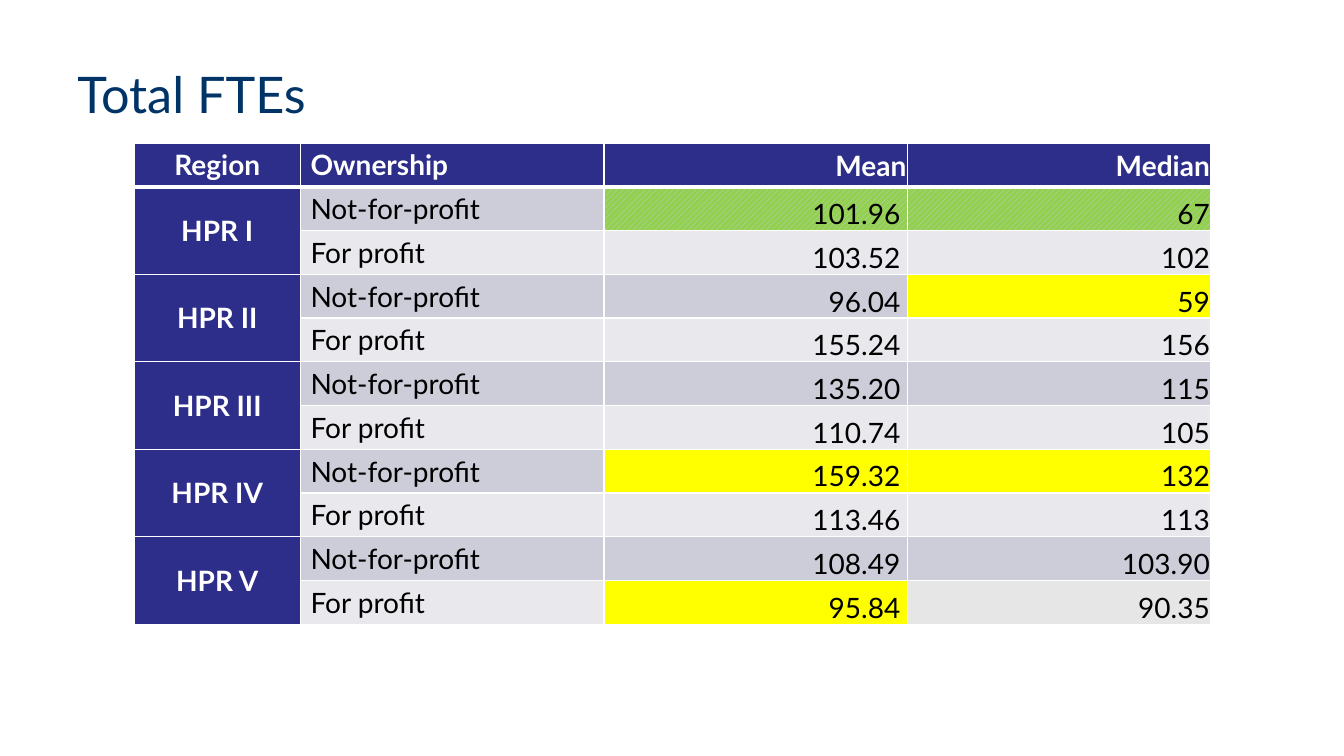
from lxml import etree
from pptx import Presentation
from pptx.dml.color import RGBColor
from pptx.enum import dml, text
from pptx.oxml.ns import qn
from pptx.util import Inches, Pt

NAVY, WHITE, BLACK, YELLOW = "2D2D8A", "FFFFFF", "000000", "FFFF00"
BAND_DARK, BAND_LIGHT, GREY, GREEN = "CDCDDA", "E8E8ED", "E6E6E6", "92D050"
HATCHED = "hatched"
LEFT, CENTER, RIGHT = text.PP_ALIGN.LEFT, text.PP_ALIGN.CENTER, text.PP_ALIGN.RIGHT
TOP, MIDDLE, BOTTOM = (text.MSO_ANCHOR.TOP, text.MSO_ANCHOR.MIDDLE,
                       text.MSO_ANCHOR.BOTTOM)

HEADERS = ["Region", "Ownership", "Mean", "Median"]
COLUMN_WIDTHS = [1.65, 3.01, 3.01, 3.01]
OWNERSHIPS = ["Not-for-profit", "For profit"]
# Region, then (mean, median) for each ownership
REGIONS = [
    ("HPR I", [("101.96", "67"), ("103.52", "102")]),
    ("HPR II", [("96.04", "59"), ("155.24", "156")]),
    ("HPR III", [("135.20", "115"), ("110.74", "105")]),
    ("HPR IV", [("159.32", "132"), ("113.46", "113")]),
    ("HPR V", [("108.49", "103.90"), ("95.84", "90.35")]),
]
# Fills that differ from the row band, by (row, column)
HIGHLIGHTS = {
    (1, 2): HATCHED, (1, 3): HATCHED, (3, 3): YELLOW,
    (7, 2): YELLOW, (7, 3): YELLOW, (10, 2): YELLOW, (10, 3): GREY,
}


def rgb(color):
    return RGBColor.from_string(color)


def write(frame, content, size=20, color=BLACK, bold=False, align=LEFT):
    paragraph = frame.paragraphs[0]
    paragraph.alignment = align
    run = paragraph.add_run()
    run.text = content
    run.font.name = "Lato"
    run.font.size = Pt(size)
    run.font.bold = bold
    run.font.color.rgb = rgb(color)


def paint(cell, fill):
    if fill == HATCHED:
        cell.fill.patterned()
        cell.fill.pattern = dml.MSO_PATTERN.WIDE_UPWARD_DIAGONAL
        cell.fill.fore_color.rgb = rgb(BAND_DARK)
        cell.fill.back_color.rgb = rgb(GREEN)
    else:
        cell.fill.solid()
        cell.fill.fore_color.rgb = rgb(fill)


def set_borders(cell, top=1, bottom=1):
    properties = cell._tc.get_or_add_tcPr()
    sides = [("a:lnL", 1), ("a:lnR", 1), ("a:lnT", top), ("a:lnB", bottom)]
    for position, (tag, width) in enumerate(sides):
        line = etree.Element(qn(tag), w=str(Pt(width)))
        fill = etree.SubElement(line, qn("a:solidFill"))
        etree.SubElement(fill, qn("a:srgbClr"), val=WHITE)
        properties.insert(position, line)


def fill_cell(cell, content, fill, anchor, number=False, right_gap=0.01, **style):
    cell.vertical_anchor = anchor
    if number:
        cell.margin_left = cell.margin_top = Inches(0.01)
        cell.margin_right = Inches(right_gap)
        cell.margin_bottom = 0
        style["align"] = RIGHT
    paint(cell, fill)
    write(cell.text_frame, content, **style)


def add_title(slide, left, top, width, height):
    box = slide.shapes.add_textbox(Inches(left), Inches(top),
                                   Inches(width), Inches(height))
    box.text_frame.word_wrap = True
    box.text_frame.vertical_anchor = MIDDLE
    write(box.text_frame, "Total FTEs", size=36, color="003366")


def add_staffing_table(slide, left, top, width, height):
    row_count = 1 + len(REGIONS) * len(OWNERSHIPS)
    table = slide.shapes.add_table(row_count, len(HEADERS), Inches(left), Inches(top),
                                   Inches(width), Inches(height)).table
    table.horz_banding = table.first_row = False
    for column, column_width in zip(table.columns, COLUMN_WIDTHS):
        column.width = Inches(column_width)
    heading = dict(fill=NAVY, anchor=MIDDLE, color=WHITE, bold=True)

    # Header row
    for column, label in enumerate(HEADERS):
        fill_cell(table.cell(0, column), label, number=column > 1,
                  align=LEFT if column else CENTER, **heading)

    # One pair of rows per region
    for index, (region, values) in enumerate(REGIONS):
        first = 1 + index * len(OWNERSHIPS)
        region_cell = table.cell(first, 0)
        region_cell.merge(table.cell(first + len(OWNERSHIPS) - 1, 0))
        fill_cell(region_cell, region, align=CENTER, **heading)
        for offset, (ownership, (mean, median)) in enumerate(zip(OWNERSHIPS, values)):
            row = first + offset
            band = BAND_LIGHT if offset else BAND_DARK
            fill_cell(table.cell(row, 1), ownership, band, TOP)
            for column, value, gap in ((2, mean, 0.07), (3, median, 0.01)):
                fill_cell(table.cell(row, column), value,
                          HIGHLIGHTS.get((row, column), band), BOTTOM,
                          number=True, right_gap=gap)

    # White grid, heavier under the header
    for row in range(row_count):
        for column in range(len(HEADERS)):
            set_borders(table.cell(row, column), top=3 if row == 1 else 1,
                        bottom=3 if row == 0 else 1)


def main():
    presentation = Presentation()
    presentation.slide_width = Inches(13.33)
    presentation.slide_height = Inches(7.5)
    slide = presentation.slides.add_slide(presentation.slide_layouts[6])
    add_title(slide, 0.67, 0.3, 12, 1.25)
    add_staffing_table(slide, 1.33, 1.42, 10.67, 4.77)
    presentation.save("out.pptx")


if __name__ == "__main__":
    main()
